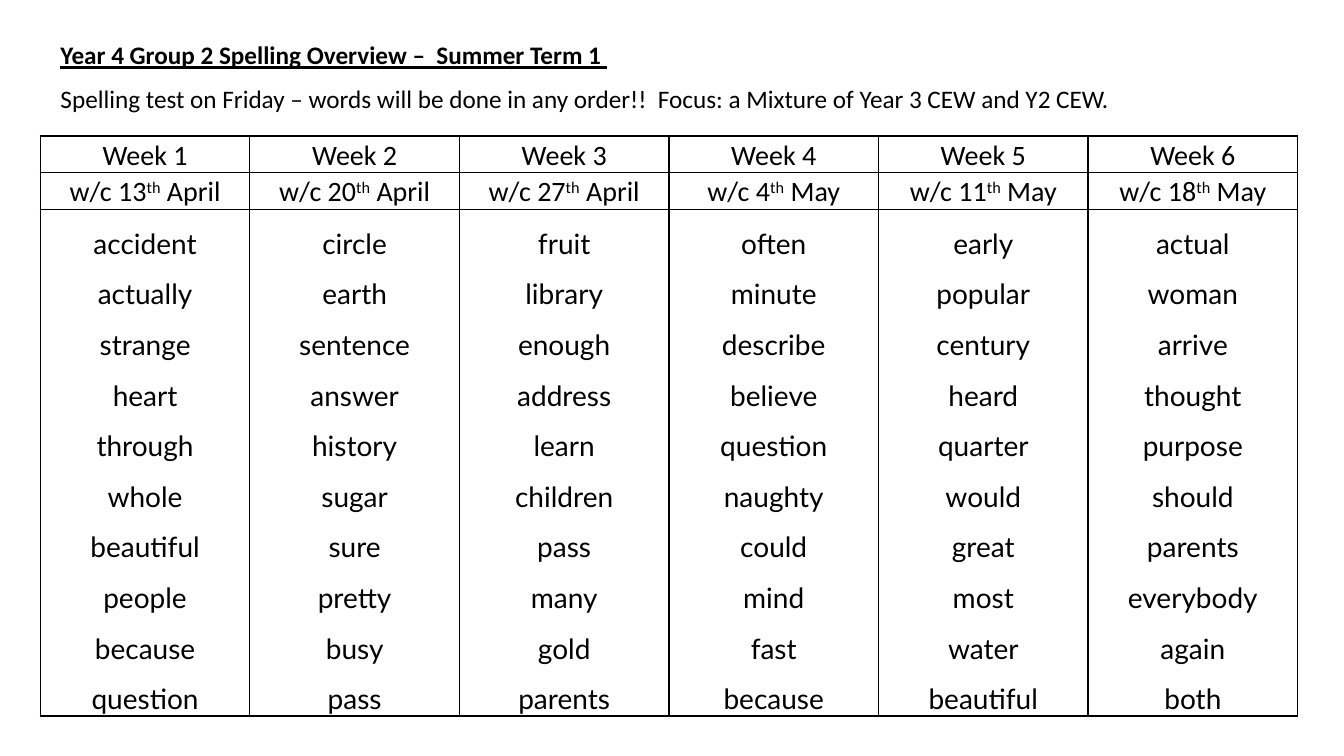
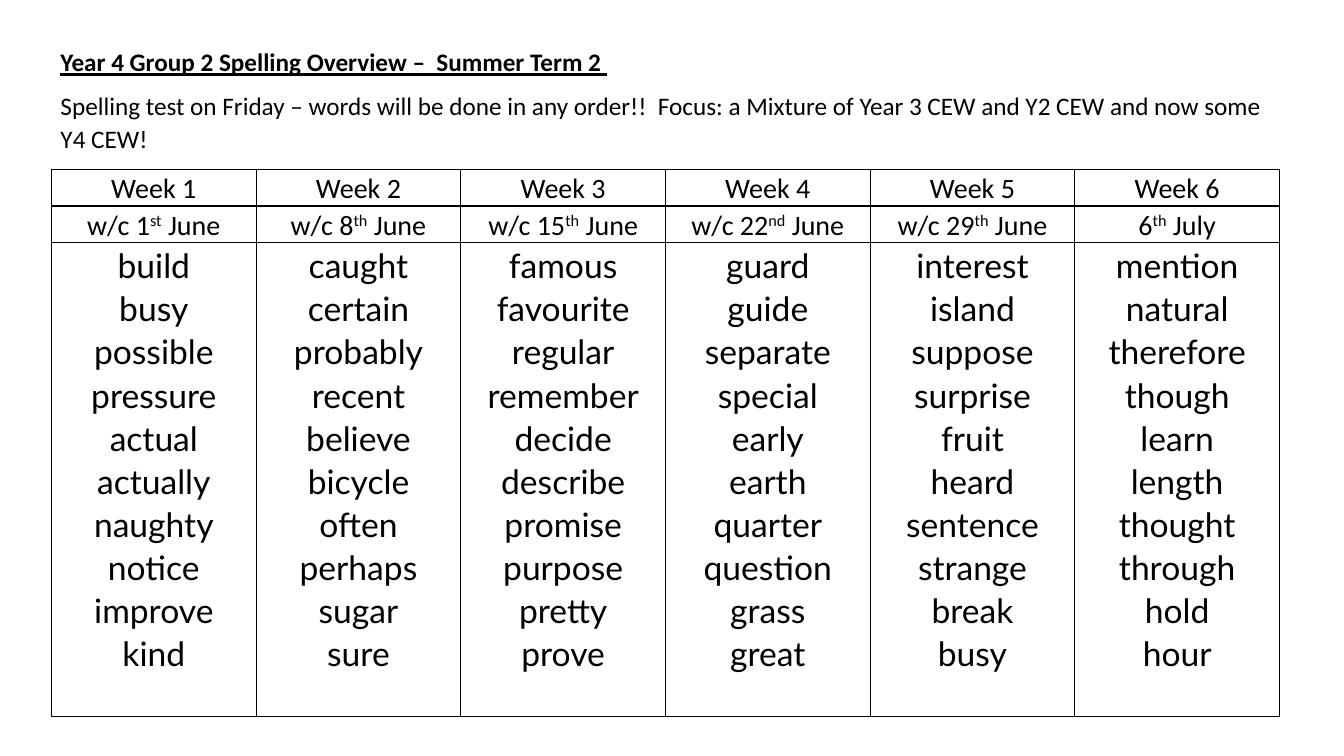
from dataclasses import dataclass

from lxml import etree
from pptx import Presentation
from pptx.dml.color import RGBColor
from pptx.enum.text import MSO_ANCHOR, MSO_AUTO_SIZE, PP_ALIGN
from pptx.oxml.ns import qn
from pptx.util import Inches, Pt

LEFT, CENTER = PP_ALIGN.LEFT, PP_ALIGN.CENTER
TOP = MSO_ANCHOR.TOP
FIXED_SIZE = MSO_AUTO_SIZE.NONE

SLIDE_WIDTH, SLIDE_HEIGHT = Inches(13.33), Inches(7.5)
INK = "000000"
HEADING_FONT, WORD_FONT = "Calibri", "Lato"
LINE_SPACING = 1.07
TITLE_LAYOUT = 1

TEXT_LEFT, TEXT_WIDTH = 3.75, 91.45
TITLE_HEIGHT, FOCUS_HEIGHT = 5.83, 10
HEADER_HEIGHT = 4.8


@dataclass(frozen=True)
class Week:
    date: str
    words: str


@dataclass(frozen=True)
class TermPage:
    title: str
    focus: str
    title_top: float
    table_left: float
    table_top: float
    table_width: float
    words_height: float
    word_size: int
    word_spacing: float
    weeks: tuple[Week, ...]


TERMS = (
    TermPage(
        "Year 4 Group 2 Spelling Overview –  Summer Term 1 ",
        "Spelling test on Friday – words will be done in any order!!  "
        "Focus: a Mixture of Year 3 CEW and Y2 CEW.",
        4.27, 3, 18, 93.55, 66.53, 20, 1.5,
        (
            Week("w/c 13|th| April", "accident actually strange heart through "
                 "whole beautiful people because question"),
            Week("w/c 20|th| April", "circle earth sentence answer history "
                 "sugar sure pretty busy pass"),
            Week("w/c 27|th| April", "fruit library enough address learn "
                 "children pass many gold parents"),
            Week("w/c 4|th| May", "often minute describe believe question "
                 "naughty could mind fast because"),
            Week("w/c 11|th| May", "early popular century heard quarter "
                 "would great most water beautiful"),
            Week("w/c 18|th| May", "actual woman arrive thought purpose "
                 "should parents everybody again both"),
        ),
    ),
    TermPage(
        "Year 4 Group 2 Spelling Overview –  Summer Term 2 ",
        "Spelling test on Friday – words will be done in any order!!  "
        "Focus: a Mixture of Year 3 CEW and Y2 CEW and now some Y4 CEW!",
        5.2, 3.83, 22.4, 91.37, 62.67, 24, LINE_SPACING,
        (
            Week("w/c 1|st| June", "build busy possible pressure actual "
                 "actually naughty notice improve kind"),
            Week("w/c 8|th| June", "caught certain probably recent believe "
                 "bicycle often perhaps sugar sure"),
            Week("w/c 15|th| June", "famous favourite regular remember decide "
                 "describe promise purpose pretty prove"),
            Week("w/c 22|nd| June", "guard guide separate special early "
                 "earth quarter question grass great"),
            Week("w/c 29|th| June", "interest island suppose surprise fruit "
                 "heard sentence strange break busy"),
            Week("6|th| July", "mention natural therefore though learn "
                 "length thought through hold hour"),
        ),
    ),
)


def color(value: str) -> RGBColor:
    return RGBColor.from_string(value)


def across(percent: float) -> int:
    return round(SLIDE_WIDTH * percent / 100)


def down(percent: float) -> int:
    return round(SLIDE_HEIGHT * percent / 100)


def add_run(paragraph, text: str, size: int, font_name: str = HEADING_FONT):
    run = paragraph.add_run()
    run.text = text
    run.font.name = font_name
    run.font.size = Pt(size)
    run.font.color.rgb = color(INK)
    return run


def fill_placeholder(shape, text: str, top: float, height: float, heading: bool) -> None:
    shape.left, shape.top = across(TEXT_LEFT), down(top)
    shape.width, shape.height = across(TEXT_WIDTH), down(height)
    frame = shape.text_frame
    frame.word_wrap = True
    frame.auto_size = FIXED_SIZE
    frame.vertical_anchor = TOP
    paragraph = frame.paragraphs[0]
    properties = paragraph._p.get_or_add_pPr()
    properties.set("marL", "0")
    properties.set("indent", "0")
    etree.SubElement(properties, qn("a:buNone"))
    paragraph.alignment = LEFT
    paragraph.line_spacing = LINE_SPACING
    paragraph.space_before = Pt(0)
    run = add_run(paragraph, text, 18)
    run.font.bold = heading
    run.font.underline = heading


def format_cell(cell) -> None:
    cell.margin_left = cell.margin_right = Inches(0.06)
    cell.margin_top = cell.margin_bottom = 0
    properties = cell._tc.get_or_add_tcPr()
    for side in ("lnL", "lnR", "lnT", "lnB"):
        border = etree.SubElement(properties, qn(f"a:{side}"), w=str(Pt(1)))
        fill = etree.SubElement(border, qn("a:solidFill"))
        etree.SubElement(fill, qn("a:srgbClr"), val=INK)
    cell.fill.background()


def center_paragraph(paragraph, spacing: float):
    paragraph.alignment = CENTER
    paragraph.line_spacing = spacing
    return paragraph


def add_date(cell, date: str) -> None:
    paragraph = center_paragraph(cell.text_frame.paragraphs[0], LINE_SPACING)
    day, suffix, month = date.split("|")
    add_run(paragraph, day, 20)
    superscript = add_run(paragraph, suffix, 20)
    superscript._r.get_or_add_rPr().set("baseline", "30000")
    add_run(paragraph, month, 20)


def add_words(cell, words: str, page: TermPage) -> None:
    frame = cell.text_frame
    for index, word in enumerate(words.split()):
        paragraph = frame.add_paragraph() if index else frame.paragraphs[0]
        add_run(center_paragraph(paragraph, page.word_spacing), word,
                page.word_size, WORD_FONT)


def add_spelling_table(slide, page: TermPage) -> None:
    heights = (HEADER_HEIGHT, HEADER_HEIGHT, page.words_height)
    table = slide.shapes.add_table(
        len(heights), len(page.weeks), across(page.table_left), down(page.table_top),
        across(page.table_width), down(sum(heights)),
    ).table
    table.first_row = False
    table.horz_banding = False
    for row, height in zip(table.rows, heights):
        row.height = down(height)
    for column, week in enumerate(page.weeks):
        table.columns[column].width = across(page.table_width / len(page.weeks))
        name_cell, date_cell, words_cell = (
            table.cell(row, column) for row in range(len(heights)))
        for cell in (name_cell, date_cell, words_cell):
            format_cell(cell)
        name = center_paragraph(name_cell.text_frame.paragraphs[0], LINE_SPACING)
        add_run(name, f"Week {column + 1}", 20)
        add_date(date_cell, week.date)
        add_words(words_cell, week.words, page)


def add_term_slide(presentation, page: TermPage) -> None:
    slide = presentation.slides.add_slide(presentation.slide_layouts[TITLE_LAYOUT])
    fill_placeholder(slide.shapes.title, page.title, page.title_top, TITLE_HEIGHT, True)
    fill_placeholder(slide.placeholders[1], page.focus,
                     page.title_top + TITLE_HEIGHT, FOCUS_HEIGHT, False)
    add_spelling_table(slide, page)


def main() -> None:
    presentation = Presentation()
    presentation.slide_width = SLIDE_WIDTH
    presentation.slide_height = SLIDE_HEIGHT
    for page in TERMS:
        add_term_slide(presentation, page)
    presentation.save("out.pptx")


if __name__ == "__main__":
    main()
